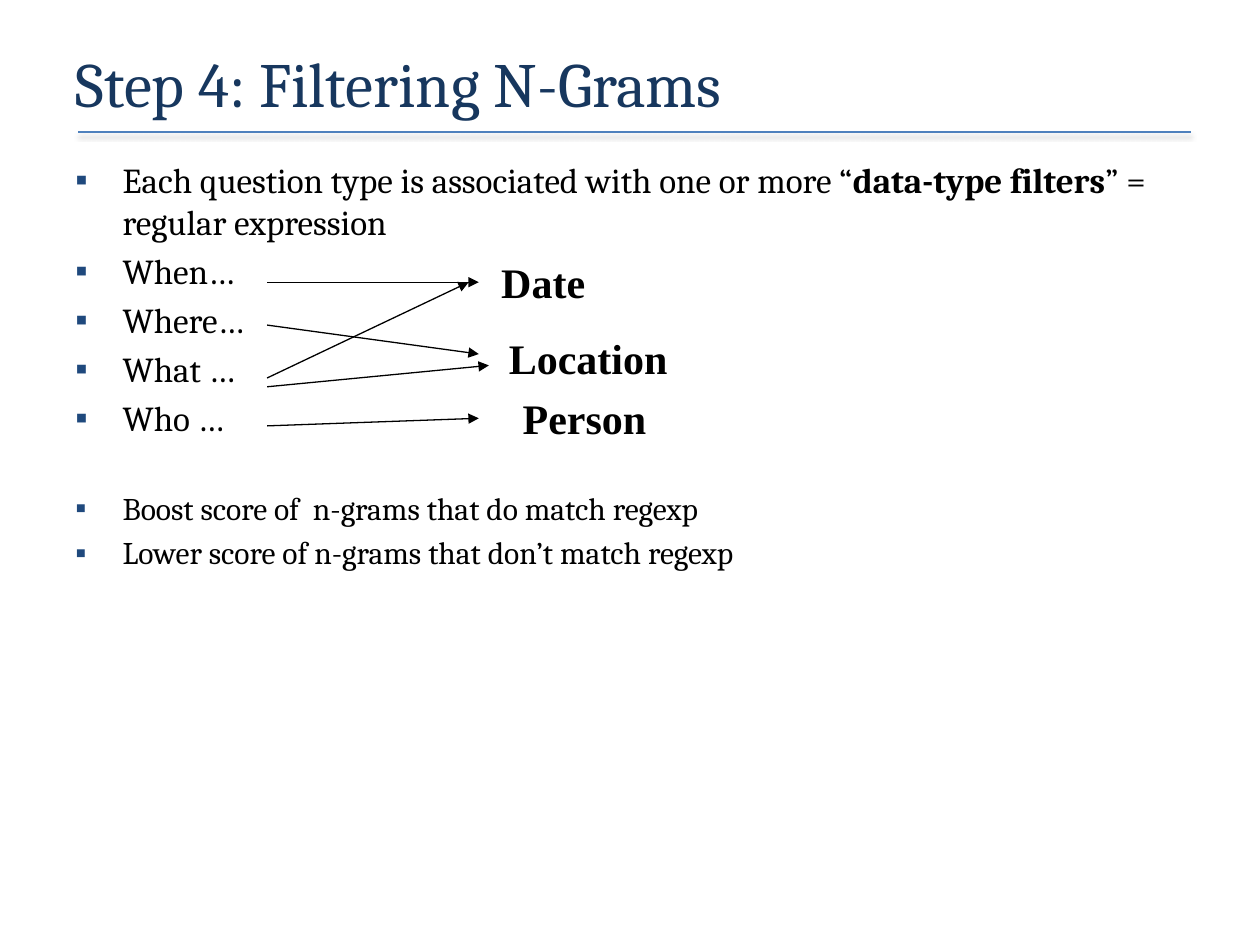
from pptx import Presentation, util as u
from pptx.dml import color as c
from pptx.enum import shapes, text as t
from pptx.oxml import parse_xml, ns

HUES = {"title": "17375E", "rule": "4F81BD", "mark": "1F497D", "ink": "000000"}
COLS, ROWS = 100, 75


def hue(name):
    return c.RGBColor.from_string(HUES[name])


def node(xml):
    return parse_xml(xml.replace(" ", f" {ns.nsdecls('a')} ", 1))


def write(para, words, size=20, font="Cambria", tone="ink", bold=False):
    run = para.add_run()
    run.text = words
    face = run.font
    face.size, face.name, face.bold = u.Pt(size), font, bold
    face.color.rgb = hue(tone)


class Deck:
    def __init__(self):
        self.prs = Presentation()
        self.prs.slide_width, self.prs.slide_height = u.Inches(10), u.Inches(7.5)
        self.page = self.prs.slides.add_slide(self.prs.slide_layouts[5])

    def x(self, col):
        return round(self.prs.slide_width * col / COLS)

    def y(self, row):
        return round(self.prs.slide_height * row / ROWS)

    def area(self, col, row, wide, high):
        return self.x(col), self.y(row), self.x(wide), self.y(high)

    def title(self, words, *area):
        box = self.page.shapes.title
        box.left, box.top, box.width, box.height = self.area(*area)
        frame = box.text_frame
        frame.auto_size = t.MSO_AUTO_SIZE.NONE
        frame.vertical_anchor = t.MSO_ANCHOR.MIDDLE
        para = frame.paragraphs[0]
        para.alignment = t.PP_ALIGN.LEFT
        write(para, words, size=36, tone="title")

    def box(self, *area, wrap=True):
        frame = self.page.shapes.add_textbox(*self.area(*area)).text_frame
        frame.word_wrap = wrap
        return frame

    def list(self, items, *area):
        frame = self.box(*area)
        for i, (runs, size, gap) in enumerate(items):
            para = frame.add_paragraph() if i else frame.paragraphs[0]
            para.space_before = u.Pt(gap)
            props = para._p.get_or_add_pPr()
            props.set("marL", str(self.x(3.75)))
            props.set("indent", str(-self.x(3.75)))
            props.append(node(f'<a:buClr ><a:srgbClr val="{HUES["mark"]}"/></a:buClr>'))
            props.append(node('<a:buFont typeface="Arial"/>'))
            props.append(node('<a:buChar char="▪"/>'))
            for words, bold in runs:
                write(para, words, size=size, bold=bold)

    def label(self, words, *area):
        frame = self.box(*area, wrap=False)
        frame.auto_size = t.MSO_AUTO_SIZE.SHAPE_TO_FIT_TEXT
        write(frame.paragraphs[0], words, size=24, font="Times New Roman", bold=True)

    def line(self, start, end, tone="ink", width=0.75, arrow=True, shade=""):
        link = self.page.shapes.add_connector(
            shapes.MSO_CONNECTOR.STRAIGHT,
            self.x(start[0]), self.y(start[1]), self.x(end[0]), self.y(end[1]))
        link.line.color.rgb = hue(tone)
        link.line.width = u.Pt(width)
        if arrow:
            link.line._get_or_add_ln().append(node('<a:tailEnd type="triangle"/>'))
        link._element.spPr.append(node(f"<a:effectLst >{shade}</a:effectLst>"))


def main():
    deck = Deck()
    shade = (f'<a:outerShdw blurRad="{u.Pt(3.1)}" dist="{u.Pt(1.6)}" dir="5400000" '
             'rotWithShape="0"><a:srgbClr val="000000"><a:alpha val="38000"/>'
             '</a:srgbClr></a:outerShdw>')
    deck.line((6.2, 10.5), (94.5, 10.5), tone="rule", width=1, arrow=False, shade=shade)
    deck.title("Step 4: Filtering N-Grams", 5, 3, 90, 7.1)

    lead = [("Each question type is associated with one or more “", False),
            ("data-type filters", True), ("” = regular expression", False)]
    asks = ["When…", "Where…", "What …", "Who …"]
    items = [(lead, 20, 4)] + [([(ask, False)], 20, 4) for ask in asks]
    items += [([("Boost score of  n-grams that do match regexp", False)], 18, 28.5),
              ([("Lower score of n-grams that don’t match regexp", False)], 18, 4)]
    deck.list(items, 5, 12.1, 90, 54.9)

    for words, col, row, wide in [("Date", 38.8, 19.9, 8.7),
                                  ("Location", 39.4, 25.9, 14.6),
                                  ("Person", 40.5, 30.7, 11.8)]:
        deck.label(words, col, row, wide, 5)

    for row, end in [(22.4, (38, 22.4)), (25.8, (38, 28.1)), (30, (37.2, 22.4)),
                     (33.8, (38, 33.2)), (30.7, (38.8, 29))]:
        deck.line((21.2, row), end)

    deck.prs.save("out.pptx")


if __name__ == "__main__":
    main()
